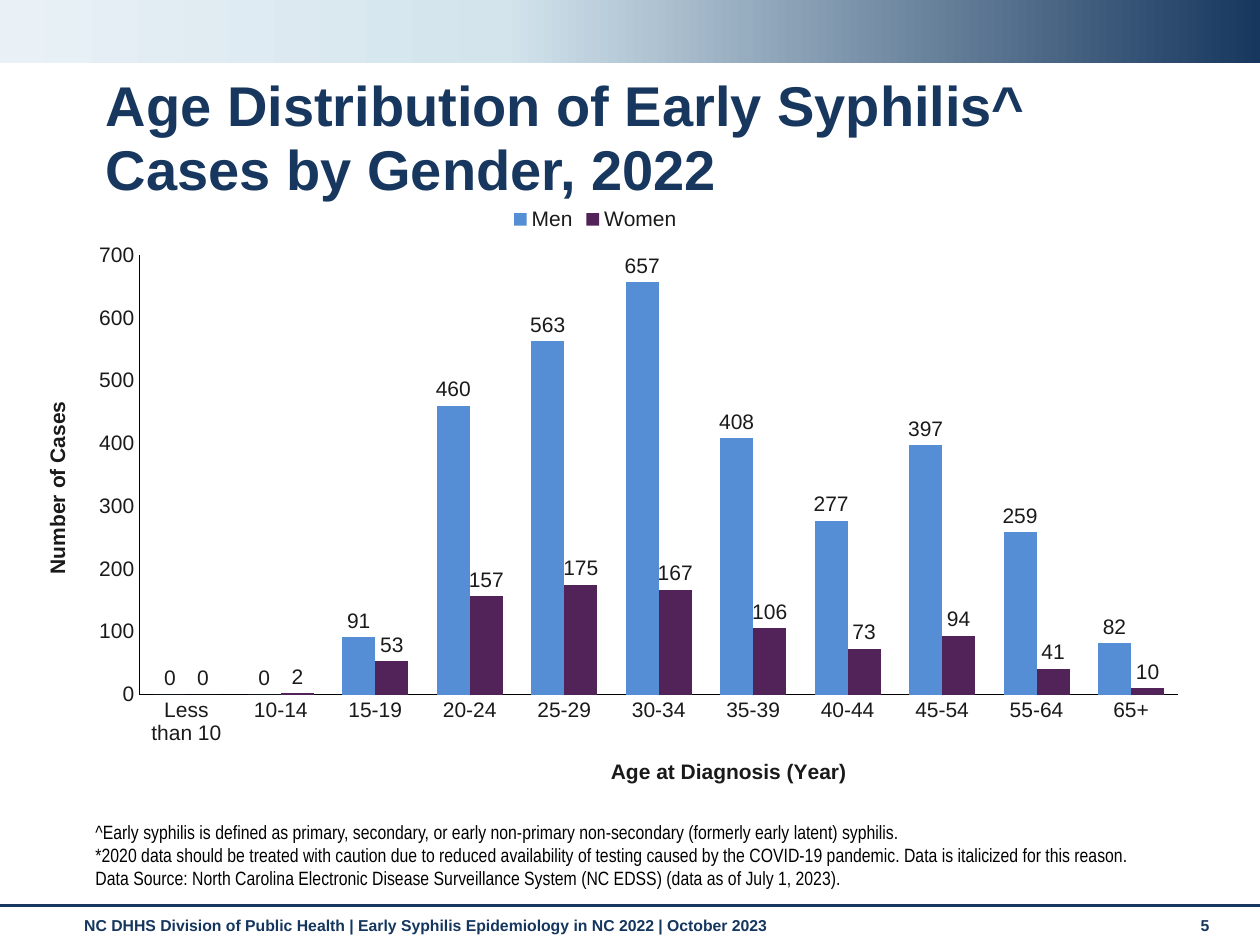
from copy import deepcopy
from dataclasses import dataclass

from lxml import etree
from pptx import Presentation
from pptx.chart.data import CategoryChartData
from pptx.dml.color import RGBColor
from pptx.enum.chart import (XL_CHART_TYPE, XL_LABEL_POSITION,
                             XL_LEGEND_POSITION, XL_TICK_MARK)
from pptx.enum.shapes import MSO_CONNECTOR, MSO_SHAPE
from pptx.enum.text import MSO_ANCHOR, MSO_AUTO_SIZE
from pptx.oxml.ns import qn
from pptx.util import Inches, Pt

COLUMN = XL_CHART_TYPE.COLUMN_CLUSTERED
OUTSIDE = XL_LABEL_POSITION.OUTSIDE_END
LEGEND_TOP = XL_LEGEND_POSITION.TOP
NO_TICK = XL_TICK_MARK.NONE
RECT = MSO_SHAPE.RECTANGLE
STRAIGHT = MSO_CONNECTOR.STRAIGHT
TOP, BOTTOM = MSO_ANCHOR.TOP, MSO_ANCHOR.BOTTOM
NO_FIT = MSO_AUTO_SIZE.NONE


@dataclass(frozen=True)
class Theme:
    font: str = "Arial"
    narrow: str = "Arial Narrow"
    navy: str = "17375E"
    footer: str = "15365E"
    ink: str = "1A1A1A"
    black: str = "000000"
    men: str = "558ED5"
    women: str = "522358"
    band: tuple = ((0, "E9F1F6"), (0.4, "D3E4ED"), (1, "17375E"))
    title_size: int = 32
    chart_size: int = 12
    note_size: int = 11
    foot_size: int = 9


AGES = ["Less than 10", "10-14", "15-19", "20-24", "25-29", "30-34",
        "35-39", "40-44", "45-54", "55-64", "65+"]
MEN = [0, 0, 91, 460, 563, 657, 408, 277, 397, 259, 82]
WOMEN = [0, 2, 53, 157, 175, 167, 106, 73, 94, 41, 10]
NOTES = [
    "^Early syphilis is defined as primary, secondary, or early non-primary "
    "non-secondary (formerly early latent) syphilis.",
    "*2020 data should be treated with caution due to reduced availability of "
    "testing caused by the COVID-19 pandemic. Data is italicized for this reason.",
    "Data Source: North Carolina Electronic Disease Surveillance System "
    "(NC EDSS) (data as of July 1, 2023).",
]


def rgb(code):
    return RGBColor.from_string(code)


def style(font, name, size, color, bold=False):
    font.name, font.size, font.bold = name, Pt(size), bold
    font.color.rgb = rgb(color)


def place(chart_part, target=None, **values):
    """Give a plot area or title a manual layout, in fractions of the chart."""
    layout = chart_part.find(qn("c:layout"))
    if layout is None:
        layout = etree.Element(qn("c:layout"))
        text = chart_part.find(qn("c:tx"))
        chart_part.insert(0 if text is None else 1, layout)
    for child in list(layout):
        layout.remove(child)
    manual = etree.SubElement(layout, qn("c:manualLayout"))
    if target:
        etree.SubElement(manual, qn("c:layoutTarget"), val=target)
    for mode in ("xMode", "yMode"):
        etree.SubElement(manual, qn("c:" + mode), val="edge")
    for key, value in values.items():
        etree.SubElement(manual, qn("c:" + key), val=str(value))


class Deck:
    """Holds the theme and the slide that is being filled."""

    def __init__(self, theme):
        self.theme = theme
        self.show = Presentation()
        self.show.slide_width, self.show.slide_height = Inches(10), Inches(7.5)
        self.slide = self.show.slides.add_slide(self.show.slide_layouts[5])

    def band(self, x, y, w, h):
        bar = self.slide.shapes.add_shape(
            RECT, Inches(x), Inches(y), Inches(w), Inches(h))
        bar.shadow.inherit = False
        bar.line.fill.background()
        bar.fill.gradient()
        bar.fill.gradient_angle = 0
        first = bar._element.spPr.find(".//" + qn("a:gs"))
        first.addnext(deepcopy(first))
        for stop, (pos, color) in zip(bar.fill.gradient_stops, self.theme.band):
            stop.position = pos
            stop.color.rgb = rgb(color)

    def rule(self, x, y, w):
        line = self.slide.shapes.add_connector(
            STRAIGHT, Inches(x), Inches(y), Inches(x + w), Inches(y))
        line.line.color.rgb = rgb(self.theme.navy)
        line.line.width = Pt(1.75)
        etree.SubElement(line._element.spPr, qn("a:effectLst"))

    def title(self, text, x, y, w, h):
        box = self.slide.shapes.title
        box.left, box.top, box.width, box.height = map(Inches, (x, y, w, h))
        self.fill(box, [text], TOP, self.theme.font, self.theme.title_size,
                  self.theme.navy, True)
        box.text_frame.paragraphs[0].line_spacing = 0.95

    def text(self, lines, x, y, w, h, anchor, *look):
        box = self.slide.shapes.add_textbox(*map(Inches, (x, y, w, h)))
        self.fill(box, lines, anchor, *look)

    def fill(self, box, lines, anchor, *look):
        frame = box.text_frame
        frame.word_wrap, frame.auto_size = True, NO_FIT
        frame.vertical_anchor = anchor
        frame.text = "\n".join(lines)
        for para in frame.paragraphs:
            para.alignment = 1
            for run in para.runs:
                style(run.font, *look)

    def chart(self, x, y, w, h):
        theme = self.theme
        data = CategoryChartData()
        data.categories = AGES
        data.add_series("Men", MEN)
        data.add_series("Women", WOMEN)
        chart = self.slide.shapes.add_chart(
            COLUMN, *map(Inches, (x, y, w, h)), data).chart
        style(chart.font, theme.font, theme.chart_size, theme.ink)
        chart.has_title = False
        chart.has_legend = True
        chart.legend.position = LEGEND_TOP
        chart.legend.include_in_layout = False

        plot = chart.plots[0]
        plot.gap_width, plot.overlap = 86, 0
        plot.vary_by_categories = False
        for series, color in zip(plot.series, (theme.men, theme.women)):
            series.format.fill.solid()
            series.format.fill.fore_color.rgb = rgb(color)
            series.invert_if_negative = False
            series.data_labels.show_value = True
            series.data_labels.position = OUTSIDE

        self.axis(chart.category_axis, "Age at Diagnosis (Year)", 0.51, 0.925)
        self.axis(chart.value_axis, "Number of Cases", 0.028, 0.336)
        chart.value_axis.minimum_scale = 0
        chart.value_axis.maximum_scale = 700
        chart.value_axis.major_unit = 100
        area = chart._chartSpace.find(".//" + qn("c:plotArea"))
        place(area, "inner", x=0.112, y=0.101, w=0.884, h=0.725)

    def axis(self, axis, name, x, y):
        theme = self.theme
        axis.has_major_gridlines = False
        axis.major_tick_mark = axis.minor_tick_mark = NO_TICK
        axis.format.line.color.rgb = rgb(theme.black)
        axis.format.line.width = Pt(0.75)
        axis.axis_title.text_frame.text = name
        run = axis.axis_title.text_frame.paragraphs[0].runs[0]
        style(run.font, theme.font, theme.chart_size, theme.ink, True)
        place(axis.axis_title._element, x=x, y=y)


def main():
    theme = Theme()
    deck = Deck(theme)
    foot = (TOP, theme.font, theme.foot_size, theme.footer, True)
    deck.text(["NC DHHS Division of Public Health | Early Syphilis Epidemiology "
               "in NC 2022 | October 2023"], 0.57, 7.22, 8.74, 0.29, *foot)
    deck.text(["5"], 9.43, 7.22, 0.44, 0.3, *foot)
    deck.band(0, 0, 10, 0.5)
    deck.rule(0, 7.19, 10)
    deck.title("Age Distribution of Early Syphilis^ Cases by Gender, 2022",
               0.74, 0.55, 8.58, 0.6)
    deck.chart(0.06, 1.54, 9.33, 4.81)
    deck.text(NOTES, 0.66, 6.57, 8.74, 0.54, BOTTOM,
              theme.narrow, theme.note_size, theme.black)
    deck.show.save("out.pptx")


if __name__ == "__main__":
    main()
